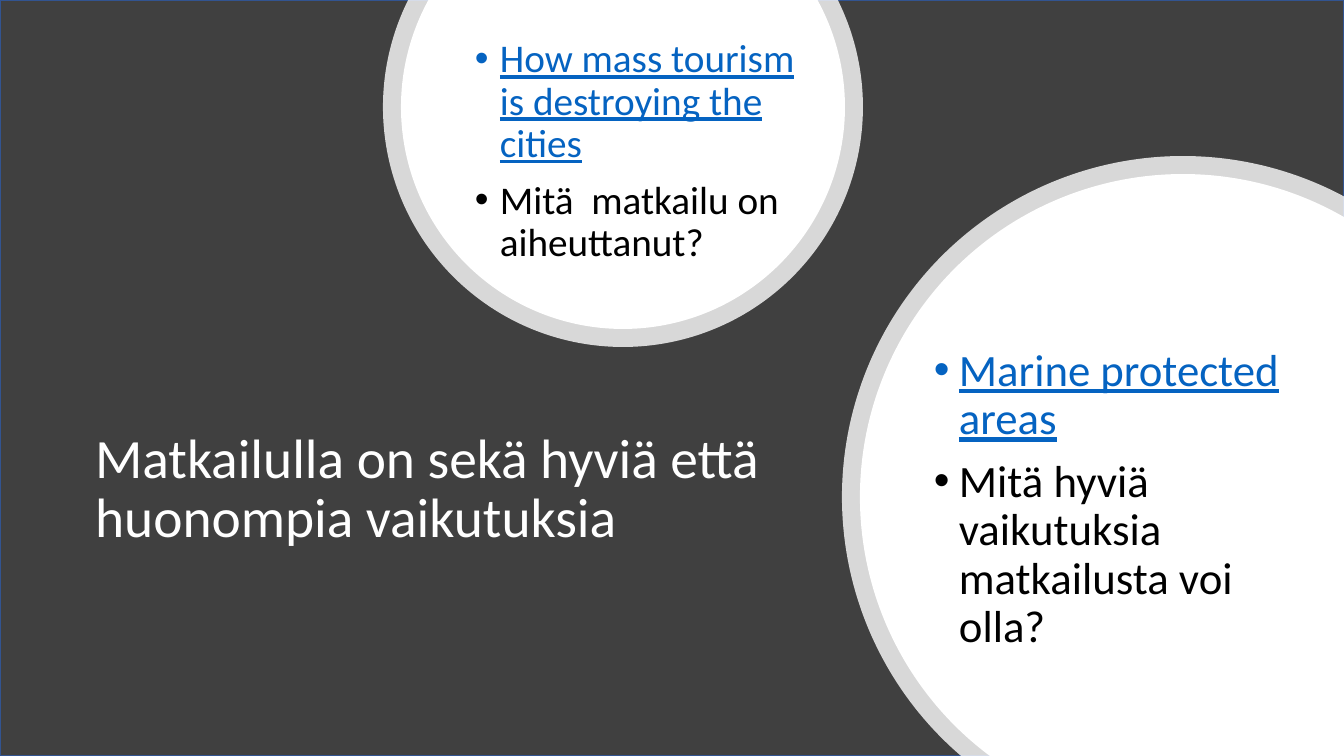
from math import acos, asin, cos, degrees, radians, sin

from lxml import etree
from pptx import Presentation
from pptx.dml.color import RGBColor
from pptx.enum.shapes import MSO_SHAPE
from pptx.enum.text import MSO_ANCHOR, MSO_AUTO_SIZE, PP_ALIGN
from pptx.oxml.ns import qn
from pptx.util import Pt

RECTANGLE = MSO_SHAPE.RECTANGLE
MIDDLE = MSO_ANCHOR.MIDDLE
NO_AUTOFIT = MSO_AUTO_SIZE.NONE
LEFT = PP_ALIGN.LEFT

SLIDE_WIDTH, SLIDE_HEIGHT = 1344, 756
SCALE = 12192000 / SLIDE_WIDTH
FONT = "Calibri"
RING_WIDTH = 18
BULLET_INDENT = 25
COLORS = {
    "panel": "404040",
    "outline": "325491",
    "white": "FFFFFF",
    "link": "0563C1",
    "text": "000000",
}


def px(length):
    return round(length * SCALE)


def color(name):
    return RGBColor.from_string(COLORS[name])


def place(shape, box):
    shape.left, shape.top, shape.width, shape.height = map(px, box)


def set_fill(shape, name, alpha=100):
    shape.shadow.inherit = False
    shape.fill.solid()
    shape.fill.fore_color.rgb = color(name)
    if alpha < 100:
        fill = shape.element.spPr.find(qn("a:solidFill"))
        etree.SubElement(fill[0], qn("a:alpha"), val=str(alpha * 1000))


def prepare_frame(shape):
    frame = shape.text_frame
    frame.word_wrap = True
    frame.auto_size = NO_AUTOFIT
    frame.vertical_anchor = MIDDLE
    return frame


def write(para, text, size, name, underline=False, bullet=False, before=0):
    para.alignment = LEFT
    para.line_spacing = 0.9
    para.space_before = Pt(before)
    if bullet:
        properties = para._p.get_or_add_pPr()
        properties.set("marL", str(px(BULLET_INDENT)))
        properties.set("indent", str(-px(BULLET_INDENT)))
        etree.SubElement(properties, qn("a:buFont"), typeface="Arial")
        etree.SubElement(properties, qn("a:buChar"), char="•")
    span = para.add_run()
    span.text = text
    span.font.name = FONT
    span.font.size = Pt(size)
    span.font.color.rgb = color(name)
    span.font.underline = underline


def add_panel(page, box):
    panel = page.shapes.add_shape(RECTANGLE, *map(px, box))
    set_fill(panel, "panel")
    panel.line.color.rgb = color("outline")
    panel.line.width = Pt(1)
    page.shapes.title.element.addprevious(panel.element)


def add_title(page, box, text):
    title = page.shapes.title
    place(title, box)
    write(prepare_frame(title).paragraphs[0], text, 39.6, "white")


def cut_at_top(center, radius):
    start = -degrees(asin(center[1] / radius))
    return start, 180 - start, []


def cut_at_corner(center, radius):
    start = 180 - degrees(asin((SLIDE_HEIGHT - center[1]) / radius))
    end = 360 - degrees(acos((SLIDE_WIDTH - center[0]) / radius))
    return start, end, [(px(SLIDE_WIDTH), px(SLIDE_HEIGHT))]


def add_disc(page, center, radius, cut, alpha=100):
    start, end, corners = cut(center, radius)
    quarters = [angle for angle in range(0, 360, 90) if start < angle < end]
    angles = [start, *quarters, end]
    points = [(px(center[0] + radius * cos(radians(angle))),
               px(center[1] + radius * sin(radians(angle))))
              for angle in angles]
    builder = page.shapes.build_freeform(*points[0])
    builder.add_line_segments(points[1:] + corners, close=True)
    disc = builder.convert_to_shape()
    segments = list(disc.element.iter(qn("a:lnTo")))
    for segment, begin, stop in zip(segments, angles, angles[1:]):
        arc = etree.Element(qn("a:arcTo"), wR=str(px(radius)), hR=str(px(radius)),
                            stAng=str(round(begin % 360 * 60000)),
                            swAng=str(round((stop - begin) * 60000)))
        segment.getparent().replace(segment, arc)
    set_fill(disc, "white", alpha)
    disc.line.fill.background()


def add_bubble(page, center, radius, cut, box, size, link, question):
    add_disc(page, center, radius, cut, alpha=80)
    add_disc(page, center, radius - RING_WIDTH, cut)
    frame = prepare_frame(page.shapes.add_textbox(*map(px, box)))
    write(frame.paragraphs[0], link, size, "link", underline=True, bullet=True)
    write(frame.add_paragraph(), question, size, "text", bullet=True, before=10)


def main():
    deck = Presentation()
    deck.slide_width, deck.slide_height = px(SLIDE_WIDTH), px(SLIDE_HEIGHT)
    page = deck.slides.add_slide(deck.slide_layouts[5])
    add_panel(page, (0, 0, SLIDE_WIDTH, SLIDE_HEIGHT))
    add_title(page, (85, 386, 709, 208),
              "Matkailulla on sekä hyviä että huonompia vaikutuksia")
    add_bubble(page, (623, 107), 240, cut_at_top, (465, 32, 360, 240), 28,
               "How mass tourism is destroying the cities",
               "Mitä  matkailu on aiheuttanut?")
    add_bubble(page, (1183, 497), 341, cut_at_corner, (924, 347, 383, 306), 32,
               "Marine protected areas",
               "Mitä hyviä vaikutuksia matkailusta voi olla?")
    deck.save("out.pptx")


if __name__ == "__main__":
    main()
